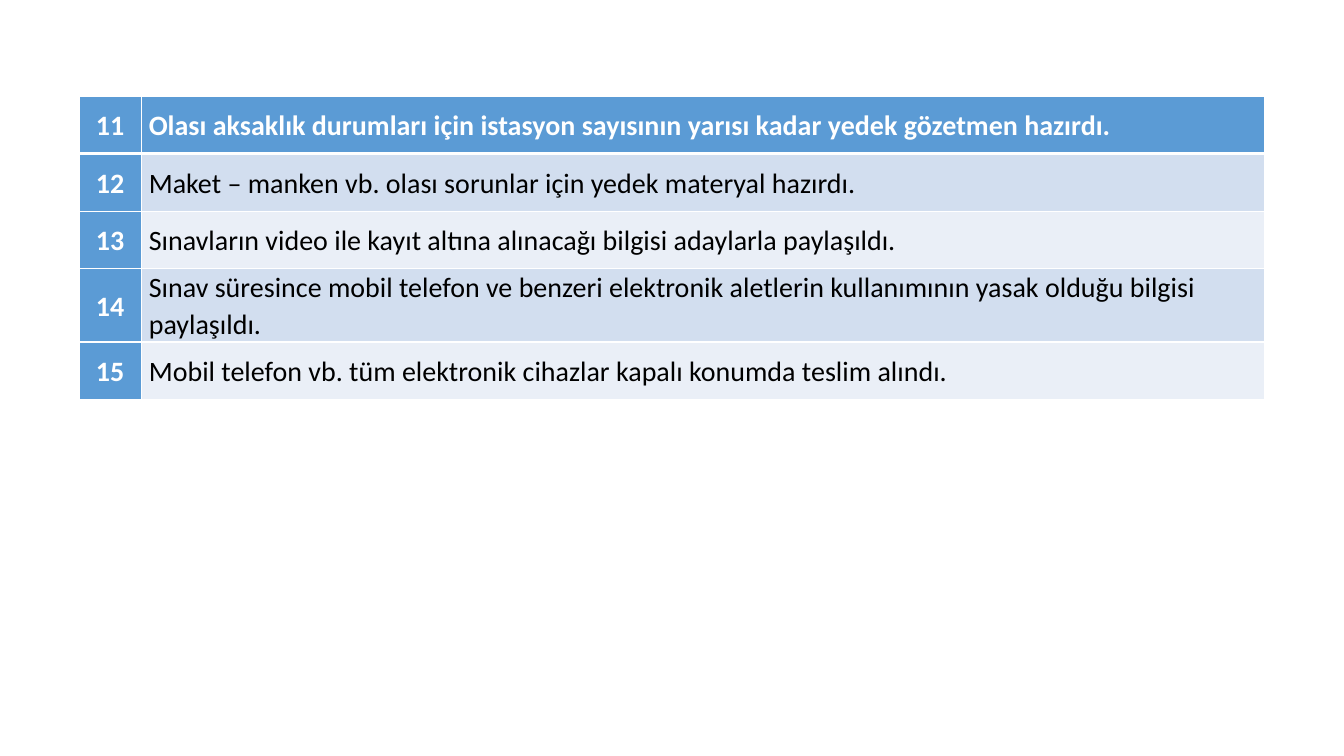
"""Build the slide with checklist items 11 to 15 in a two-column table."""
from lxml.etree import SubElement
from pptx import Presentation
from pptx.dml.color import RGBColor as RGB
from pptx.enum.text import MSO_ANCHOR as Anchor, PP_ALIGN as Align
from pptx.oxml.ns import qn
from pptx.util import Cm, Pt

COLORS = {"head": "5B9BD5", "dark": "D2DEEF", "light": "EAEFF7",
          "white": "FFFFFF", "black": "000000"}
ITEMS = [
    "Olası aksaklık durumları için istasyon sayısının yarısı kadar yedek gözetmen hazırdı.",
    "Maket – manken vb. olası sorunlar için yedek materyal hazırdı.",
    "Sınavların video ile kayıt altına alınacağı bilgisi adaylarla paylaşıldı.",
    "Sınav süresince mobil telefon ve benzeri elektronik aletlerin kullanımının yasak olduğu bilgisi paylaşıldı.",
    "Mobil telefon vb. tüm elektronik cihazlar kapalı konumda teslim alındı.",
]
FIRST = 11
WIDTHS = [Cm(1.57), Cm(28.32)]
HEIGHT = Cm(1.45)


def border(cell, side, width):
    line = SubElement(cell._tc.get_or_add_tcPr(), qn(f"a:ln{side}"), w=str(Pt(width)))
    fill = SubElement(line, qn("a:solidFill"))
    SubElement(fill, qn("a:srgbClr"), val=COLORS["white"])


prs = Presentation()
prs.slide_width, prs.slide_height = Cm(33.87), Cm(19.05)
slide = prs.slides.add_slide(prs.slide_layouts[6])
frame = slide.shapes.add_table(len(ITEMS), 2, Cm(1.99), Cm(2.42),
                               sum(WIDTHS), HEIGHT * len(ITEMS))
table = frame.table
for col, width in zip(table.columns, WIDTHS):
    col.width = width

for row, item in enumerate(ITEMS):
    table.rows[row].height = HEIGHT
    for col, text in enumerate([str(FIRST + row), item]):
        cell = table.cell(row, col)
        strong = row == 0 or col == 0
        band = "head" if strong else "dark" if row % 2 else "light"
        for side in "LRTB":
            thick = (row == 0 and side == "B") or (row == 1 and side == "T")
            border(cell, side, 3 if thick else 1)
        cell.fill.solid()
        cell.fill.fore_color.rgb = RGB.from_string(COLORS[band])
        cell.vertical_anchor = Anchor.MIDDLE
        cell.margin_left = cell.margin_right = Cm(0.19)
        cell.margin_top = cell.margin_bottom = 0
        cell.text = text
        para = cell.text_frame.paragraphs[0]
        para.alignment = Align.LEFT if col else Align.CENTER
        para.line_spacing = 1.07
        para.space_after = Pt(8)
        font = para.font
        font.name, font.size, font.bold = "Calibri", Pt(20), strong
        font.color.rgb = RGB.from_string(COLORS["white" if strong else "black"])

prs.save("out.pptx")
